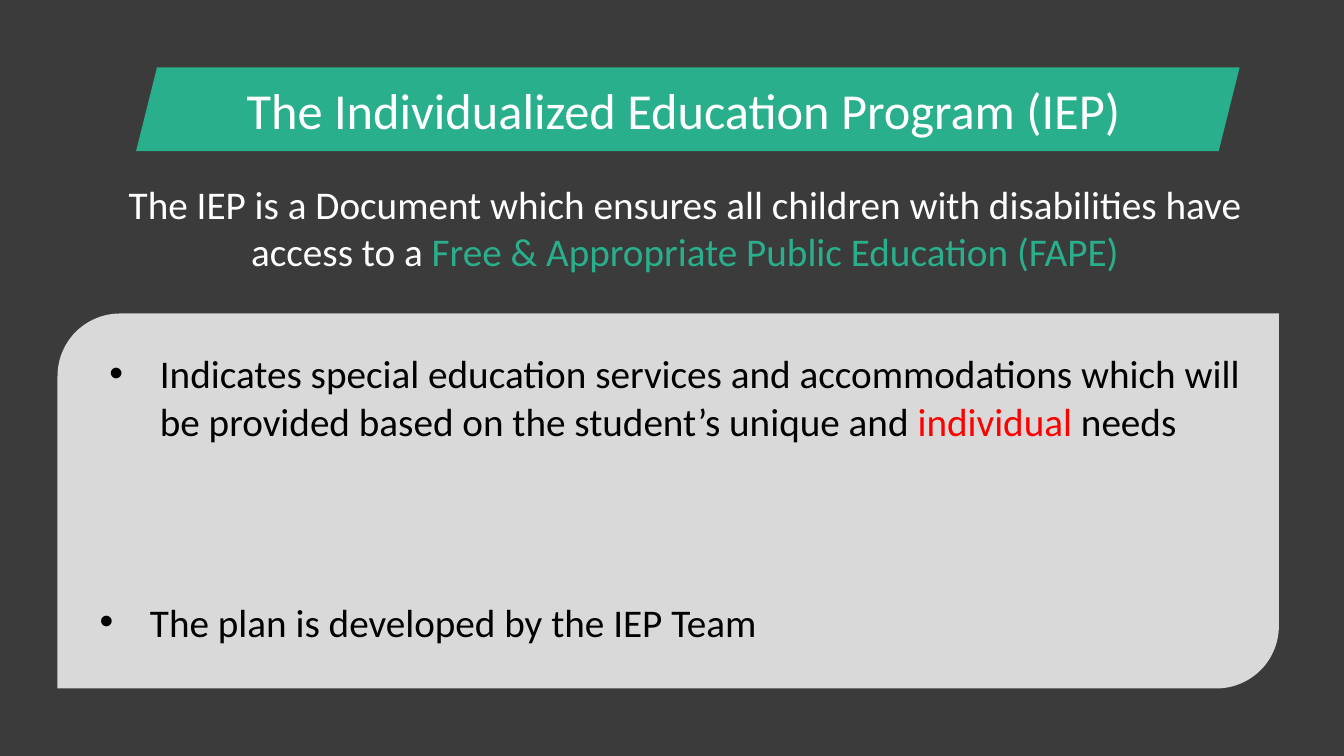
from lxml import etree
from pptx import Presentation
from pptx.dml.color import RGBColor
from pptx.enum.shapes import MSO_SHAPE
from pptx.enum.text import MSO_ANCHOR, PP_ALIGN
from pptx.oxml.ns import qn
from pptx.util import Cm, Pt

PANEL, BANNER = MSO_SHAPE.ROUND_2_DIAG_RECTANGLE, MSO_SHAPE.PARALLELOGRAM
LEFT, CENTER = PP_ALIGN.LEFT, PP_ALIGN.CENTER
MIDDLE = MSO_ANCHOR.MIDDLE

# Content: text runs with their colours, boxes as left, top, width, height in cm
FONT = "Calibri"
DARK, GRAY, GREEN = "3B3B3B", "D9D9D9", "29AF8C"
WHITE, BLACK, RED = "FFFFFF", "000000", "FF0000"

TITLE = [("The Individualized Education Program (IEP)", WHITE)]
INTRO = [
    ("The IEP is a Document which ensures all children with disabilities have access to a ", WHITE),
    ("Free & Appropriate Public Education (FAPE)", GREEN),
]
POINTS = [
    ((2.51, 8.69, 30.15, 2.64), [
        ("Indicates special education services and accommodations which will "
         "be provided based on the student’s unique and ", BLACK),
        ("individual", RED),
        (" needs", BLACK),
    ]),
    ((2.26, 14.94, 27.84, 1.45), [("The plan is developed by the IEP Team", BLACK)]),
]
PANEL_BOX = (1.45, 7.9, 30.78, 9.45)
INTRO_BOX = (2.26, 4.42, 30, 2.64)
TITLE_BOX = (3.43, 1.7, 27.81, 2.11)


def rgb(value):
    return RGBColor.from_string(value)


def add_filled(kind, box, color):
    sp = s.shapes.add_shape(kind, *map(Cm, box))
    sp.shadow.inherit = False
    sp.fill.solid()
    sp.fill.fore_color.rgb = rgb(color)
    sp.line.fill.background()
    return sp


def write(sp, runs, size, align):
    tf = sp.text_frame
    tf.word_wrap = True
    p = tf.paragraphs[0]
    p.alignment = align
    for text, color in runs:
        r = p.add_run()
        r.text = text
        r.font.name = FONT
        r.font.size = Pt(size)
        r.font.color.rgb = rgb(color)
    return p


def add_bullet(p):
    pPr = p._p.get_or_add_pPr()
    pPr.set("marL", str(Cm(1.27)))
    pPr.set("indent", str(-Cm(1.27)))
    etree.SubElement(pPr, qn("a:buFont")).set("typeface", "Arial")
    etree.SubElement(pPr, qn("a:buChar")).set("char", "•")


prs = Presentation()
prs.slide_width, prs.slide_height = Cm(33.87), Cm(19.05)
s = prs.slides.add_slide(prs.slide_layouts[6])
s.background.fill.solid()
s.background.fill.fore_color.rgb = rgb(DARK)

# Panel and introduction
add_filled(PANEL, PANEL_BOX, GRAY)
write(s.shapes.add_textbox(*map(Cm, INTRO_BOX)), INTRO, 28, CENTER)

# Bulleted points on the panel
for box, runs in POINTS:
    add_bullet(write(s.shapes.add_textbox(*map(Cm, box)), runs, 28, LEFT))

# Title banner
banner = add_filled(BANNER, TITLE_BOX, GREEN)
banner.text_frame.vertical_anchor = MIDDLE
write(banner, TITLE, 36, LEFT)

prs.save("out.pptx")
